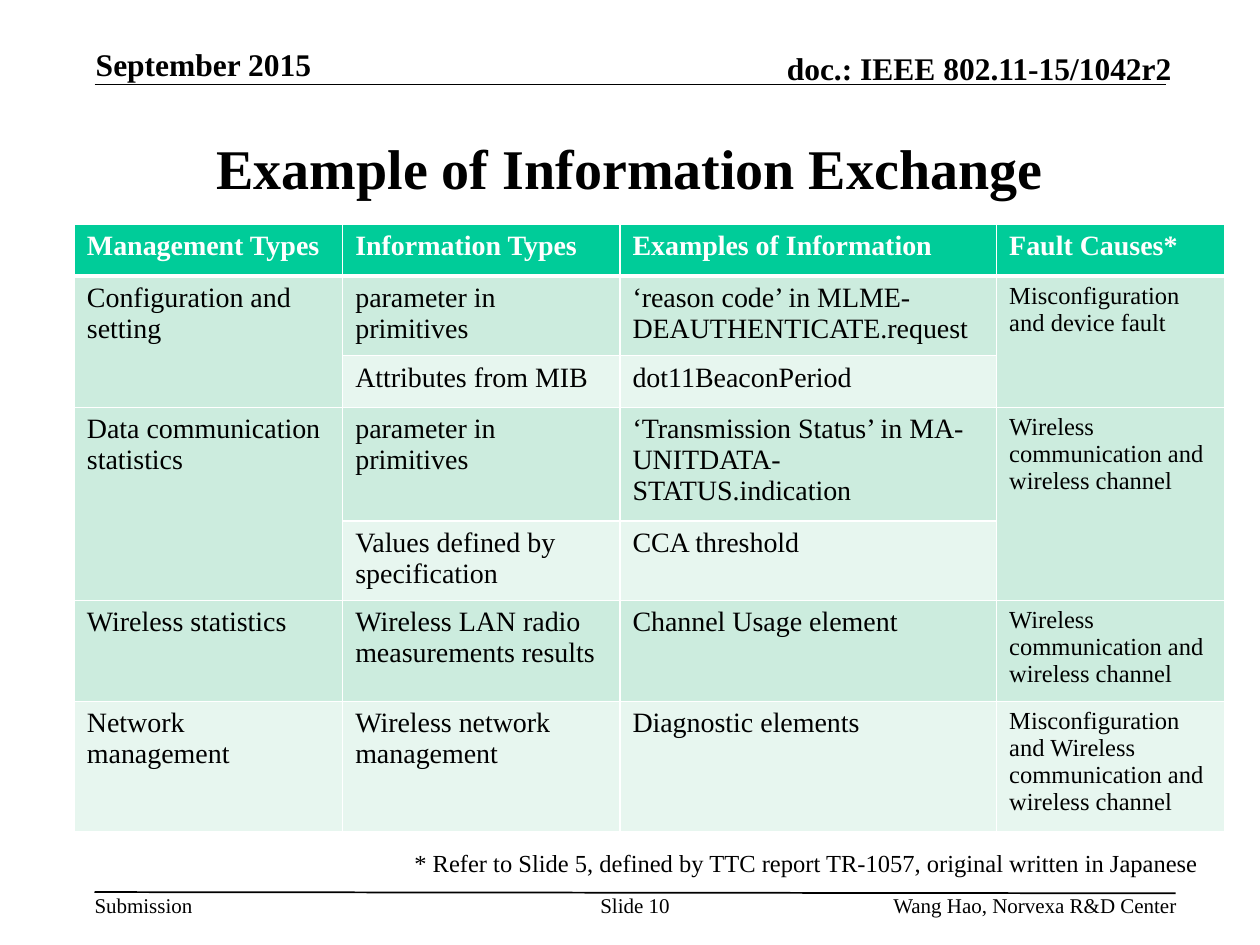
from lxml.etree import SubElement
from pptx import Presentation
from pptx.dml.color import RGBColor
from pptx.enum.shapes import MSO_CONNECTOR
from pptx.enum.text import MSO_ANCHOR, PP_ALIGN
from pptx.oxml.ns import qn
from pptx.util import Inches, Pt

FONT = "Times New Roman"
COLORS = {
    "text": "000000",
    "white": "FFFFFF",
    "header": "00CC99",
    "band_dark": "CCECDE",
    "band_light": "E7F6EF",
}
COL_WIDTHS = [2.13, 2.2, 2.99, 1.81]
ROW_HEIGHT = 0.41

# None marks a cell that continues the one above it.
ROWS = [
    ("header", ["Management Types", "Information Types",
                "Examples of Information", "Fault Causes*"]),
    ("band_dark", ["Configuration and setting", "parameter in primitives",
                   "‘reason code’ in MLME-DEAUTHENTICATE.request",
                   "Misconfiguration and device fault"]),
    ("band_light", [None, "Attributes from MIB", "dot11BeaconPeriod", None]),
    ("band_dark", ["Data communication statistics", "parameter in primitives",
                   "‘Transmission Status’ in MA-UNITDATA-STATUS.indication",
                   "Wireless communication and wireless channel"]),
    ("band_light", [None, "Values defined by specification",
                    "CCA threshold", None]),
    ("band_dark", ["Wireless statistics",
                   "Wireless LAN radio measurements results",
                   "Channel Usage element",
                   "Wireless communication and wireless channel"]),
    ("band_light", ["Network management", "Wireless network management",
                    "Diagnostic elements",
                    "Misconfiguration and Wireless communication "
                    "and wireless channel"]),
]


def rgb(name):
    return RGBColor.from_string(COLORS[name])


def write(tf, text, size, bold=False, color="text", align=PP_ALIGN.LEFT):
    p = tf.paragraphs[0]
    p.alignment = align
    r = p.add_run()
    r.text = text
    font_format = {"name": FONT, "size": Pt(size), "bold": bold}
    for key, value in font_format.items():
        setattr(r.font, key, value)
    r.font.color.rgb = rgb(color)


def add_text(s, box, text, size, bold=False, align=PP_ALIGN.LEFT,
             anchor=MSO_ANCHOR.TOP, inset=(0, 0), wrap=True):
    """Add a text box; inset is the (side, top and bottom) margin."""
    sp = s.shapes.add_textbox(*map(Inches, box))
    tf = sp.text_frame
    side, end = map(Inches, inset)
    frame_format = {
        "word_wrap": wrap, "vertical_anchor": anchor,
        "margin_left": side, "margin_right": side,
        "margin_top": end, "margin_bottom": end,
    }
    for key, value in frame_format.items():
        setattr(tf, key, value)
    write(tf, text, size, bold, align=align)


def add_rule(s, *ends):
    line = s.shapes.add_connector(MSO_CONNECTOR.STRAIGHT, *map(Inches, ends))
    line.line.color.rgb = rgb("text")
    line.line.width = Pt(1)
    SubElement(line._element.spPr, qn("a:effectLst"))


def set_borders(cell, widths):
    """Draw white borders; widths maps an edge letter to points."""
    tc_pr = cell._tc.get_or_add_tcPr()
    for i, (edge, width) in enumerate(widths.items()):
        ln = tc_pr.makeelement(qn(f"a:ln{edge}"), {"w": str(Pt(width))})
        fill = SubElement(ln, qn("a:solidFill"))
        SubElement(fill, qn("a:srgbClr"), val=COLORS["white"])
        tc_pr.insert(i, ln)


def add_information_table(s):
    frame = s.shapes.add_table(
        len(ROWS), len(COL_WIDTHS), Inches(0.59), Inches(1.78),
        Inches(sum(COL_WIDTHS)), Inches(ROW_HEIGHT * len(ROWS)))
    table = frame.table
    for col, width in zip(table.columns, COL_WIDTHS):
        col.width = Inches(width)
    for i, (fill, texts) in enumerate(ROWS):
        table.rows[i].height = Inches(ROW_HEIGHT)
        header = i == 0
        for j, text in enumerate(texts):
            cell = table.cell(i, j)
            cell.fill.solid()
            cell.fill.fore_color.rgb = rgb(fill)
            set_borders(cell, {"L": 1, "R": 1, "T": 3 if i == 1 else 1,
                               "B": 3 if header else 1})
            if text is None:
                table.cell(i - 1, j).merge(cell)
                continue
            last_column = j == len(texts) - 1
            write(cell.text_frame, text,
                  14 if last_column and not header else 16,
                  bold=header, color="white" if header else "text")


def main():
    prs = Presentation()
    prs.slide_width, prs.slide_height = Inches(10), Inches(7.5)
    s = prs.slides.add_slide(prs.slide_layouts[6])

    add_rule(s, 0.75, 0.67, 9.25, 0.67)
    add_rule(s, 0.75, 7.08, 9.33, 7.09)
    add_text(s, (0.76, 0.36, 2.05, 0.3), "September 2015", 18, bold=True,
             anchor=MSO_ANCHOR.BOTTOM)
    add_text(s, (5.47, 0.39, 3.83, 0.3), "doc.: IEEE 802.11-15/1042r2", 18,
             bold=True, align=PP_ALIGN.RIGHT, anchor=MSO_ANCHOR.BOTTOM)
    add_text(s, (0.75, 0.75, 8.5, 1.16), "Example of Information Exchange",
             32, bold=True, align=PP_ALIGN.CENTER, anchor=MSO_ANCHOR.MIDDLE,
             inset=(0.1, 0.05))
    add_information_table(s)
    add_text(s, (3.19, 6.68, 6.54, 0.34),
             "* Refer to Slide 5, defined by TTC report TR-1057, "
             "original written in Japanese", 14, inset=(0.1, 0.05))
    add_text(s, (0.75, 7.08, 0.78, 0.2), "Submission", 12, wrap=False)
    add_text(s, (4.75, 7.08, 0.58, 0.4), "Slide 10", 12,
             align=PP_ALIGN.CENTER)
    add_text(s, (5.86, 7.08, 3.48, 0.2), "Wang Hao, Norvexa R&D Center", 12,
             align=PP_ALIGN.RIGHT)
    prs.save("out.pptx")


if __name__ == "__main__":
    main()
